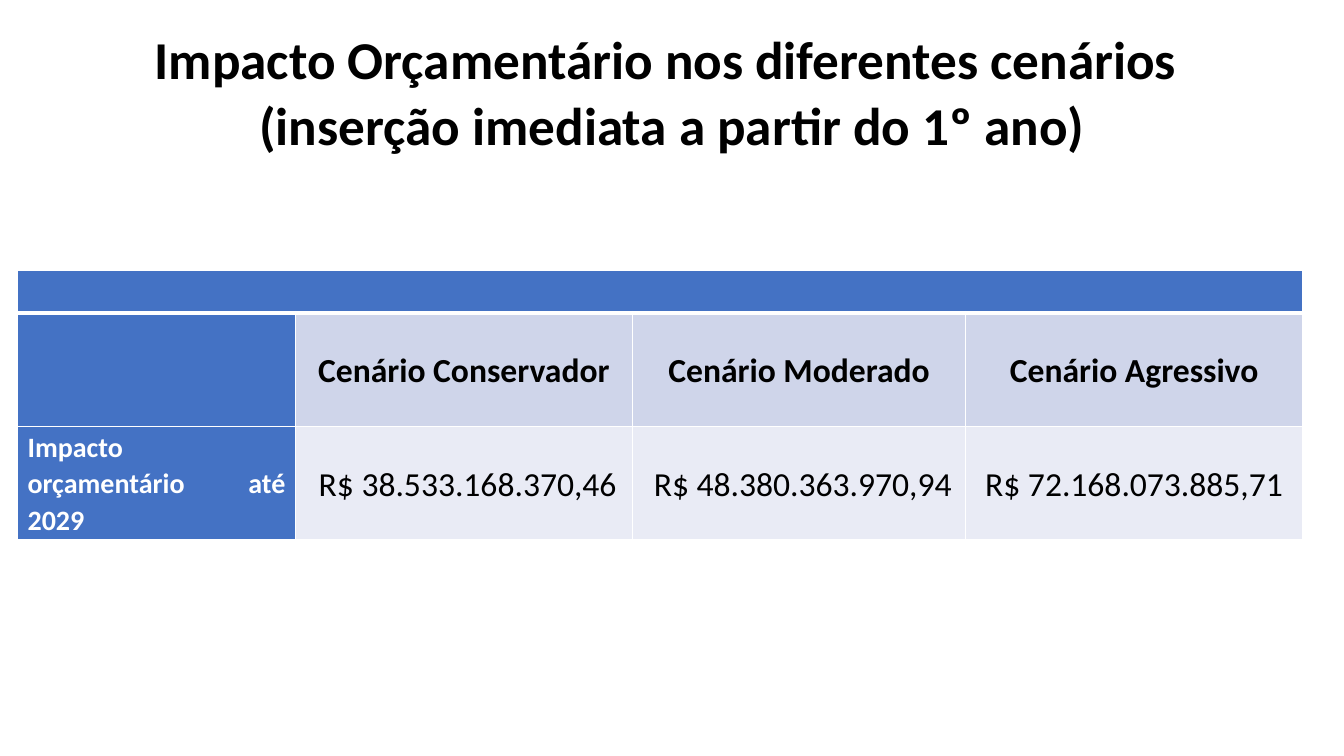
from lxml import etree
from pptx import Presentation
from pptx import util as u
from pptx.dml.color import RGBColor
from pptx.enum import text
from pptx.oxml.ns import qn

BLACK, WHITE = "000000", "FFFFFF"
BLUE, PALE_BLUE, PALEST_BLUE = "4472C4", "CFD5EA", "E9EBF5"
CENTER, JUSTIFY = text.PP_ALIGN.CENTER, text.PP_ALIGN.JUSTIFY


def rgb(color):
    return RGBColor.from_string(color)


class SlideBuilder:
    font = "Calibri"

    def __init__(self, slide):
        self.slide = slide

    def style(self, para, size, color, bold, align, spacing, after):
        para.alignment = align
        para.line_spacing = spacing
        para.space_after = u.Pt(after)
        para.font.name = self.font
        para.font.size = u.Pt(size)
        para.font.bold = bold
        para.font.color.rgb = rgb(color)

    def title(self, lines, left, top, width, height):
        box = self.slide.shapes.add_textbox(*map(u.Pt, (left, top, width, height)))
        frame = box.text_frame
        frame.word_wrap = True
        frame.vertical_anchor = text.MSO_ANCHOR.MIDDLE
        frame.text = "\n".join(lines)
        for para in frame.paragraphs:
            self.style(para, 38, BLACK, True, CENTER, 0.9, 6)

    def table(self, left, top, widths, heights):
        frame = self.slide.shapes.add_table(
            len(heights), len(widths),
            *map(u.Pt, (left, top, sum(widths), sum(heights))))
        table = frame.table
        for column, width in zip(table.columns, widths):
            column.width = u.Pt(width)
        for row, height in zip(table.rows, heights):
            row.height = u.Pt(height)
        return table

    def cell(self, cell, fill, top_line, bottom_line):
        cell.fill.solid()
        cell.fill.fore_color.rgb = rgb(fill)
        properties = cell._tc.get_or_add_tcPr()
        sides = {"L": 1, "R": 1, "T": top_line, "B": bottom_line}
        for position, (side, width) in enumerate(sides.items()):
            line = etree.Element(qn(f"a:ln{side}"), w=str(u.Pt(width)))
            solid = etree.SubElement(line, qn("a:solidFill"))
            etree.SubElement(solid, qn("a:srgbClr"), val=WHITE)
            properties.insert(position, line)

    def cell_text(self, cell, words, size, color, bold, align):
        cell.text = words
        cell.vertical_anchor = text.MSO_ANCHOR.MIDDLE
        cell.margin_left = cell.margin_right = u.Pt(7.2)
        cell.margin_top = cell.margin_bottom = 0
        self.style(cell.text_frame.paragraphs[0], size, color, bold, align, 1.07, 8)


def main():
    deck = Presentation()
    deck.slide_width, deck.slide_height = u.Pt(960), u.Pt(540)
    builder = SlideBuilder(deck.slides.add_slide(deck.slide_layouts[6]))

    rows = [
        ["", "", "", ""],
        ["", "Cenário Conservador", "Cenário Moderado", "Cenário Agressivo"],
        ["Impacto orçamentário até 2029", " R$ 38.533.168.370,46",
         " R$ 48.380.363.970,94", "R$ 72.168.073.885,71"],
    ]
    row_fills = [BLUE, PALE_BLUE, PALEST_BLUE]
    table = builder.table(12.5, 193.2, [198.6, 240.6, 238.2, 240.6], [30.2, 81.2, 81.2])
    for r, row in enumerate(rows):
        for c, words in enumerate(row):
            cell = table.cell(r, c)
            builder.cell(cell, row_fills[r] if c else BLUE,
                         top_line=3 if r == 1 else 1, bottom_line=3 if r == 0 else 1)
            if words and c == 0:
                builder.cell_text(cell, words, 20, WHITE, True, JUSTIFY)
            elif words:
                builder.cell_text(cell, words, 24, BLACK, r == 1, CENTER)
    table.cell(0, 0).merge(table.cell(0, 3))

    builder.title(["Impacto Orçamentário nos diferentes cenários ",
                   "(inserção imediata a partir do 1º ano)"], 0, 8.6, 960, 118.8)
    deck.save("out.pptx")


if __name__ == "__main__":
    main()
